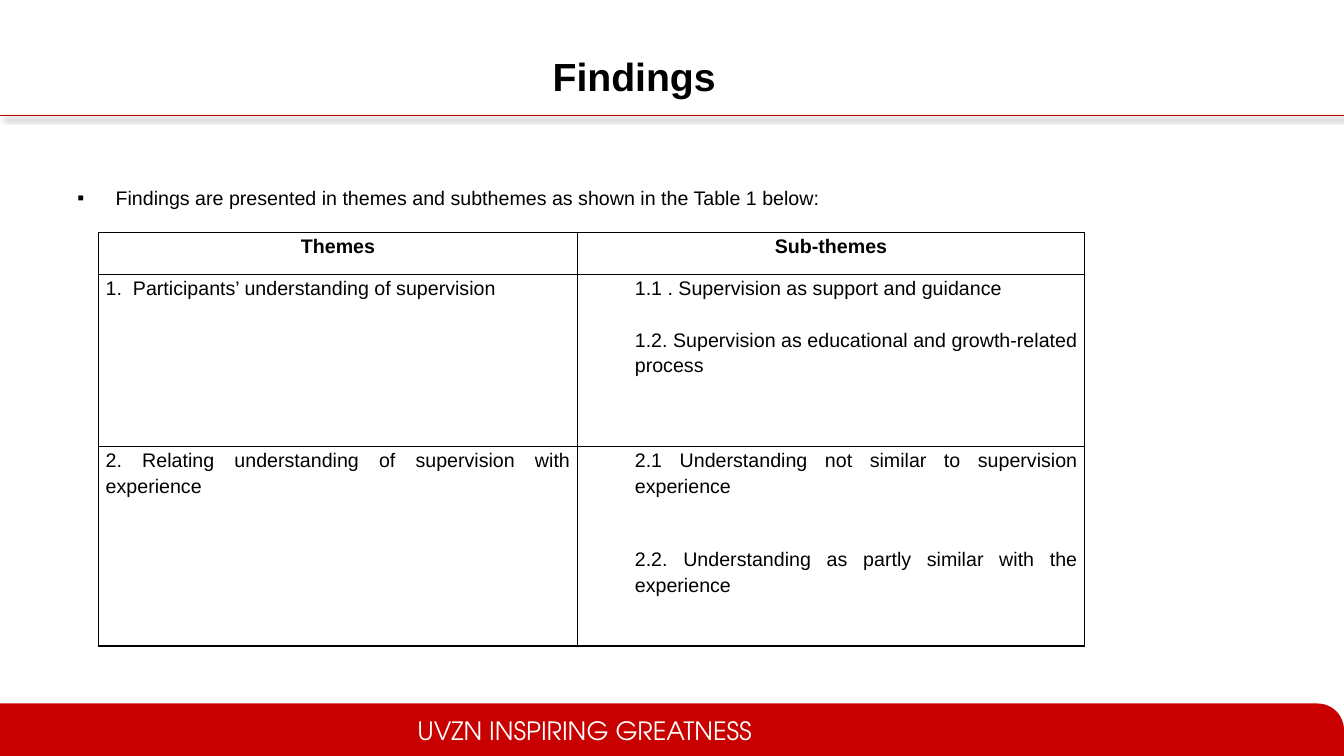
import pptx
import pptx.util
import pptx.dml.color
import pptx.enum.text
import pptx.enum.shapes
import pptx.oxml
import pptx.oxml.ns

BLACK = pptx.dml.color.RGBColor(0x00, 0x00, 0x00)
WHITE = pptx.dml.color.RGBColor(0xFF, 0xFF, 0xFF)
RED = pptx.dml.color.RGBColor(0xC8, 0x00, 0x00)
RULE = pptx.dml.color.RGBColor(0xC0, 0x00, 0x00)
NS = pptx.oxml.ns.nsdecls("a")
ALIGN = pptx.enum.text.PP_ALIGN
ANCHOR = pptx.enum.text.MSO_ANCHOR
Pt = pptx.util.Pt

deck = pptx.Presentation()
deck.slide_width = pptx.util.Inches(13.33)
deck.slide_height = pptx.util.Inches(7.5)
COLS, ROWS = 160, 90


def grid(*spans):
    units = (deck.slide_width / COLS, deck.slide_height / ROWS)
    return [round(span * units[i % 2]) for i, span in enumerate(spans)]


def write(para, text, size=14, font="Arial", color=BLACK, bold=False,
          align=ALIGN.JUSTIFY, lead=1.15, above=None, below=0, left=0, hang=0):
    run = para.add_run()
    run.text = text
    run.font.size = Pt(size)
    run.font.name = font
    run.font.bold = bold
    run.font.color.rgb = color
    para.alignment = align
    para.line_spacing = lead
    para.space_after = Pt(below)
    if above is not None:
        para.space_before = Pt(above)
    props = para._p.get_or_add_pPr()
    props.set("marL", str(pptx.util.Inches(left)))
    props.set("indent", str(pptx.util.Inches(hang)))
    return props


slide = deck.slides.add_slide(deck.slide_layouts[1])
title, body = slide.placeholders

rule = slide.shapes.add_connector(
    pptx.enum.shapes.MSO_CONNECTOR.STRAIGHT, *grid(0, 13.8, COLS, 13.8))
rule.line.color.rgb = RULE
rule.line.width = Pt(0.75)
rule._element.spPr.append(pptx.oxml.parse_xml(
    f'<a:effectLst {NS}><a:outerShdw blurRad="{Pt(4)}" dist="{Pt(3)}" dir="2700000">'
    '<a:srgbClr val="000000"><a:alpha val="40000"/></a:srgbClr>'
    '</a:outerShdw></a:effectLst>'))

band = slide.shapes.add_shape(
    pptx.enum.shapes.MSO_SHAPE.ROUND_1_RECTANGLE, *grid(0, 83.75, COLS, 6.25))
band.adjustments[0] = 0.5
band.shadow.inherit = False
band.fill.solid()
band.fill.fore_color.rgb = RED
band.line.fill.background()

motto = slide.shapes.add_textbox(*grid(48.5, 84.6, 56.6, 4.8)).text_frame
motto.word_wrap = True
motto.auto_size = pptx.enum.text.MSO_AUTO_SIZE.SHAPE_TO_FIT_TEXT
write(motto.paragraphs[0], "UVZN INSPIRING GREATNESS", size=18,
      font="TeX Gyre Adventor", color=WHITE, align=ALIGN.LEFT, lead=1.0)

for holder, spot in ((title, (3.5, 1.55, 144, 15)), (body, (8, 21.1, 144, 59.4))):
    holder.left, holder.top, holder.width, holder.height = grid(*spot)
    holder.text_frame.auto_size = pptx.enum.text.MSO_AUTO_SIZE.NONE

title.text_frame.vertical_anchor = ANCHOR.MIDDLE
write(title.text_frame.paragraphs[0], "Findings", size=28, bold=True,
      align=ALIGN.CENTER, lead=1.0)
intro = write(body.text_frame.paragraphs[0],
              "Findings are presented in themes and subthemes as shown in the Table 1 below:",
              below=8, left=0.38, hang=-0.38)
intro.append(pptx.oxml.parse_xml(f'<a:buFont {NS} typeface="Arial"/>'))
intro.append(pptx.oxml.parse_xml(f'<a:buChar {NS} char="▪"/>'))

HEAD = dict(bold=True, align=ALIGN.CENTER, below=8)
THEMES = [
    (["Themes"], ["Sub-themes"], HEAD, HEAD, 0),
    (["1.  Participants’ understanding of supervision"],
     ["1.1 . Supervision as support and guidance",
      "1.2. Supervision as educational and growth-related process"],
     {}, dict(left=0.5), 18.5),
    (["2. Relating understanding of supervision with experience"],
     ["2.1 Understanding not similar to supervision experience",
      "2.2. Understanding as partly similar with the experience"],
     {}, dict(left=0.5, below=8), 26.5),
]
WIDE, HIGH = (57, 60.4), (5, 20.5, 23.7)

table = slide.shapes.add_table(
    len(HIGH), len(WIDE), *grid(11.75, 27.7, sum(WIDE), sum(HIGH))).table
table.first_row = table.horz_banding = False
for col, span in zip(table.columns, WIDE):
    col.width = grid(span)[0]
for row, span, (theme, parts, plain, inner, gap) in zip(table.rows, HIGH, THEMES):
    row.height = grid(0, span)[1]
    for cell, texts, style in zip(row.cells, (theme, parts), (plain, inner)):
        cell.margin_left = cell.margin_right = pptx.util.Inches(0.07)
        cell.margin_top = cell.margin_bottom = 0
        cell.vertical_anchor = ANCHOR.TOP
        for side in "LRTB":
            cell._tc.get_or_add_tcPr().append(pptx.oxml.parse_xml(
                f'<a:ln{side} {NS} w="{Pt(1)}"><a:solidFill>'
                f'<a:srgbClr val="{BLACK}"/></a:solidFill></a:ln{side}>'))
        cell.fill.background()
        frame = cell.text_frame
        for i, text in enumerate(texts):
            para = frame.add_paragraph() if i else frame.paragraphs[0]
            write(para, text, above=gap if i else 0, **style)

deck.save("out.pptx")
